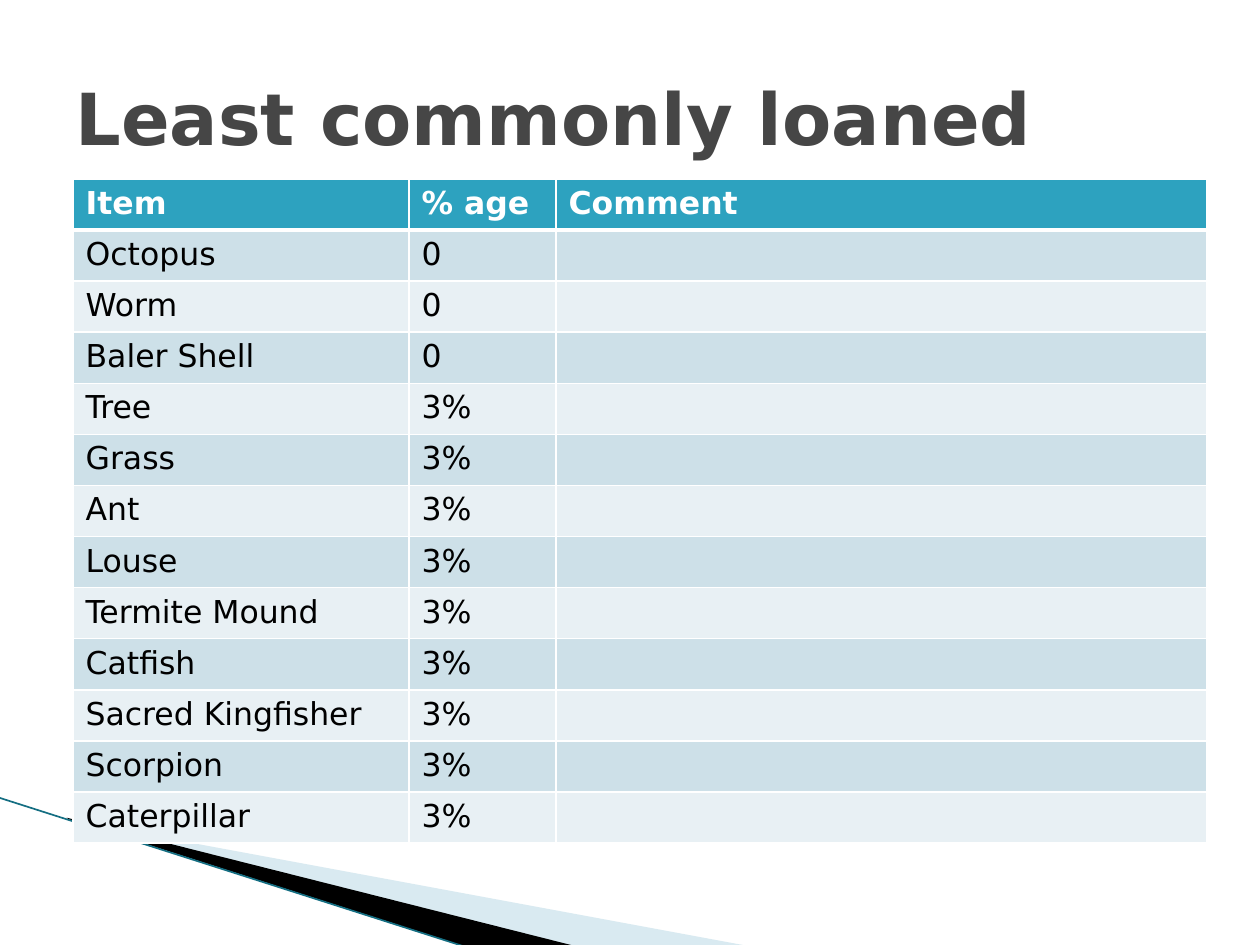
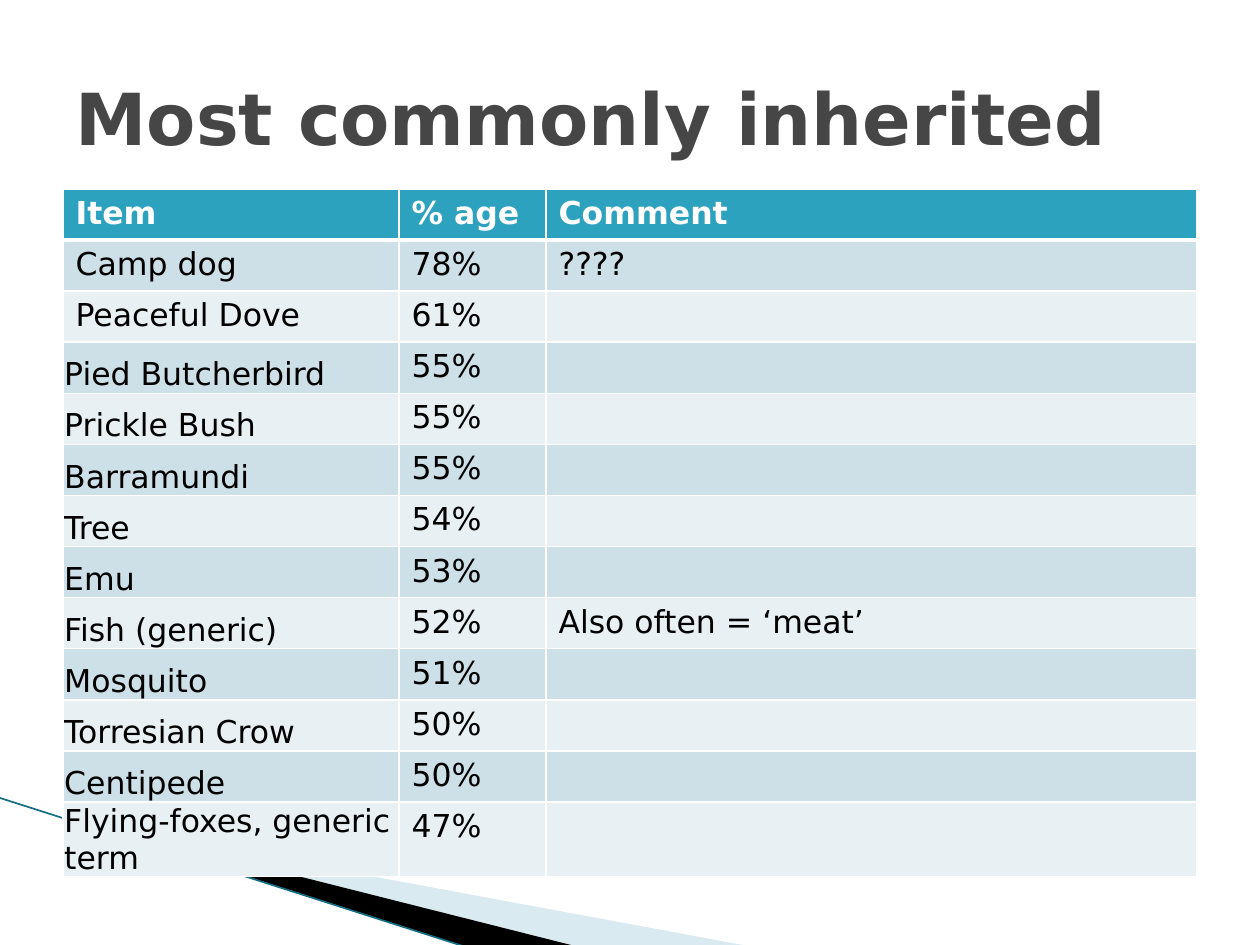
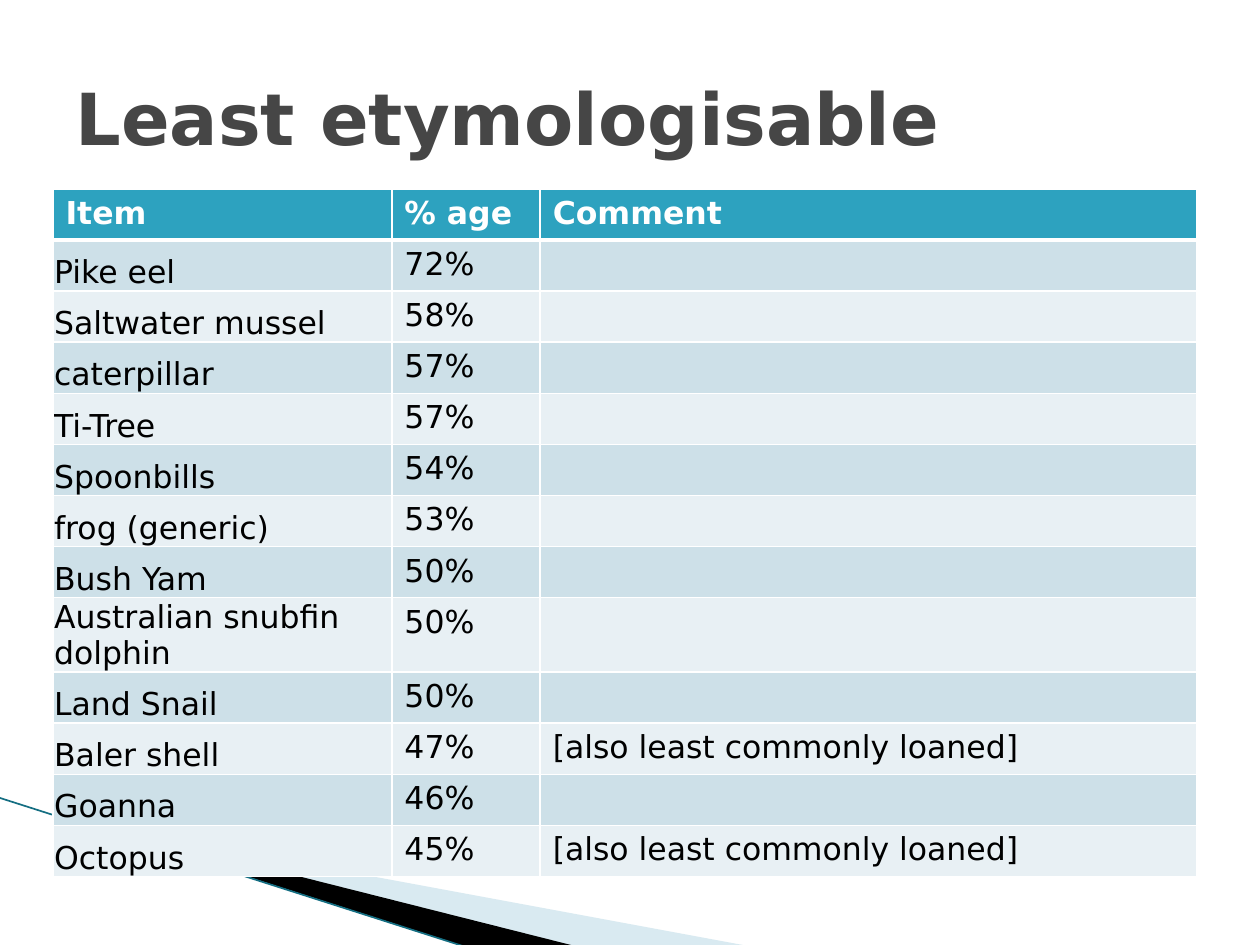
import pptx
import pptx.dml.color
import pptx.enum.shapes
import pptx.enum.text
import pptx.oxml.ns
import pptx.oxml.xmlchemy
import pptx.util
from pptx.util import Inches

COLORS = {
    "title": "464646", "header": "2DA2BF", "header_text": "FFFFFF",
    "body_text": "000000", "odd_row": "CDE0E8", "even_row": "E8F0F4",
    "border": "FFFFFF", "pale_band": "A0CBDC", "dark_band": "000000",
    "edge": "146E82",
}
FONT = "DejaVu Sans"
HEADINGS = ("Item", "% age", "Comment")
COLUMN_SHARES = (16, 7, 31)
ROW_HEIGHT = 5.27 / 13
SHALLOW_HEIGHT = 0.34

SLIDES = [
    {
        "title": "Least commonly loaned",
        "place": (0.58, 1.42, 9),
        "shallow_items": ("Catfish",),
        "first_flush_row": None,
        "rows": [
            ("Octopus", "0"), ("Worm", "0"), ("Baler Shell", "0"),
            ("Tree", "3%"), ("Grass", "3%"), ("Ant", "3%"),
            ("Louse", "3%"), ("Termite Mound", "3%"), ("Catfish", "3%"),
            ("Sacred Kingfisher", "3%"), ("Scorpion", "3%"),
            ("Caterpillar", "3%"),
        ],
        "comments": {},
    },
    {
        "title": "Most commonly inherited",
        "place": (0.5, 1.5, 9),
        "shallow_items": (),
        "first_flush_row": 3,
        "rows": [
            ("Camp dog", "78%"), ("Peaceful Dove", "61%"),
            ("Pied Butcherbird", "55%"), ("Prickle Bush", "55%"),
            ("Barramundi", "55%"), ("Tree", "54%"), ("Emu", "53%"),
            ("Fish (generic)", "52%"), ("Mosquito", "51%"),
            ("Torresian Crow", "50%"), ("Centipede", "50%"),
            ("Flying-foxes, generic term", "47%"),
        ],
        "comments": {"Camp dog": "????", "Fish (generic)": "Also often = ‘meat’"},
    },
    {
        "title": "Least etymologisable",
        "place": (0.42, 1.5, 9.08),
        "shallow_items": (),
        "first_flush_row": 1,
        "rows": [
            ("Pike eel", "72%"), ("Saltwater mussel", "58%"),
            ("caterpillar", "57%"), ("Ti-Tree", "57%"), ("Spoonbills", "54%"),
            ("frog (generic)", "53%"), ("Bush Yam", "50%"),
            ("Australian snubfin dolphin", "50%"), ("Land Snail", "50%"),
            ("Baler shell", "47%"), ("Goanna", "46%"), ("Octopus", "45%"),
        ],
        "comments": {
            "Baler shell": "[also least commonly loaned]",
            "Octopus": "[also least commonly loaned]",
        },
    },
]

BANDS = [
    ("pale_band", 40, [(0.55, 6.51), (5.95, 7.51), (4.56, 7.51), (0.55, 6.5)]),
    ("dark_band", 100, [(0.53, 6.49), (4.57, 7.51), (3.72, 7.52), (0.54, 6.5)]),
]
EDGE = (-0.01, 6.33, 3.71, 7.52)


def rgb(name):
    return pptx.dml.color.RGBColor.from_string(COLORS[name])


def new_element(tag):
    return pptx.oxml.xmlchemy.OxmlElement(tag)


def style(text_frame, size, color, bold):
    for paragraph in text_frame.paragraphs:
        for run in paragraph.runs:
            run.font.name = FONT
            run.font.size = pptx.util.Pt(size)
            run.font.bold = bold
            run.font.color.rgb = rgb(color)


def move_bands_to_layout(slide):
    parts = []
    for color, opacity, points in BANDS:
        corners = [(Inches(x), Inches(y)) for x, y in points]
        outline = slide.shapes.build_freeform(*corners[0])
        outline.add_line_segments(corners[1:], close=True)
        band = outline.convert_to_shape()
        band.shadow.inherit = False
        band.line.fill.background()
        band.fill.solid()
        band.fill.fore_color.rgb = rgb(color)
        if opacity < 100:
            tint = band.element.spPr.find(".//" + pptx.oxml.ns.qn("a:srgbClr"))
            alpha = new_element("a:alpha")
            alpha.set("val", str(opacity * 1000))
            tint.append(alpha)
        parts.append(band)
    edge = slide.shapes.add_connector(
        pptx.enum.shapes.MSO_CONNECTOR.STRAIGHT, *map(Inches, EDGE))
    edge.line.color.rgb = rgb("edge")
    edge.line.width = pptx.util.Pt(0.95)
    edge.element.spPr.append(new_element("a:effectLst"))
    parts.append(edge)
    for position, part in enumerate(parts, start=2):
        slide.slide_layout.shapes.element.insert(position, part.element)


def set_title(slide, wording):
    title = slide.shapes.title
    title.left, title.top, title.width, title.height = map(
        Inches, (0.5, 0.3, 9, 1.25))
    frame = title.text_frame
    frame.text = wording
    frame.auto_size = pptx.enum.text.MSO_AUTO_SIZE.NONE
    frame.vertical_anchor = pptx.enum.text.MSO_ANCHOR.MIDDLE
    frame.paragraphs[0].alignment = pptx.enum.text.PP_ALIGN.LEFT
    style(frame, 41, "title", True)


def set_borders(cell, row):
    widths = {"L": 1, "R": 1, "T": 3 if row == 1 else 1, "B": 3 if row == 0 else 1}
    properties = cell._tc.get_or_add_tcPr()
    for side, width in widths.items():
        border = new_element(f"a:ln{side}")
        border.set("w", str(int(pptx.util.Pt(width))))
        fill = new_element("a:solidFill")
        color = new_element("a:srgbClr")
        color.set("val", COLORS["border"])
        fill.append(color)
        border.append(fill)
        properties.append(border)


def fill_cell(cell, wording, row, flush):
    set_borders(cell, row)
    cell.fill.solid()
    shade = "header" if row == 0 else "odd_row" if row % 2 else "even_row"
    cell.fill.fore_color.rgb = rgb(shade)
    cell.text_frame.text = wording
    style(cell.text_frame, 18, "body_text" if row else "header_text", row == 0)
    if flush:
        cell.vertical_anchor = pptx.enum.text.MSO_ANCHOR.BOTTOM
        cell.margin_left = cell.margin_right = cell.margin_top = Inches(0.01)
        cell.margin_bottom = Inches(0)


def add_items(slide, content):
    left, top, width = content["place"]
    comments = content["comments"]
    lines = [HEADINGS] + [
        (item, share, comments.get(item, "")) for item, share in content["rows"]]
    heights = [SHALLOW_HEIGHT if line[0] in content["shallow_items"] else ROW_HEIGHT
               for line in lines]
    items = slide.shapes.add_table(
        len(lines), len(HEADINGS), Inches(left), Inches(top),
        Inches(width), Inches(sum(heights))).table
    items.horz_banding = False
    for column, share in zip(items.columns, COLUMN_SHARES):
        column.width = Inches(width * share / sum(COLUMN_SHARES))
    first_flush = content["first_flush_row"]
    for row, (line, height) in enumerate(zip(lines, heights)):
        items.rows[row].height = Inches(height)
        for column, wording in enumerate(line):
            flush = column == 0 and first_flush is not None and row >= first_flush
            fill_cell(items.cell(row, column), wording, row, flush)


def main():
    deck = pptx.Presentation()
    deck.slide_width, deck.slide_height = Inches(10), Inches(7.5)
    title_only = deck.slide_layouts[5]
    for number, content in enumerate(SLIDES):
        slide = deck.slides.add_slide(title_only)
        if number == 0:
            move_bands_to_layout(slide)
        set_title(slide, content["title"])
        add_items(slide, content)
    deck.save("out.pptx")


if __name__ == "__main__":
    main()
